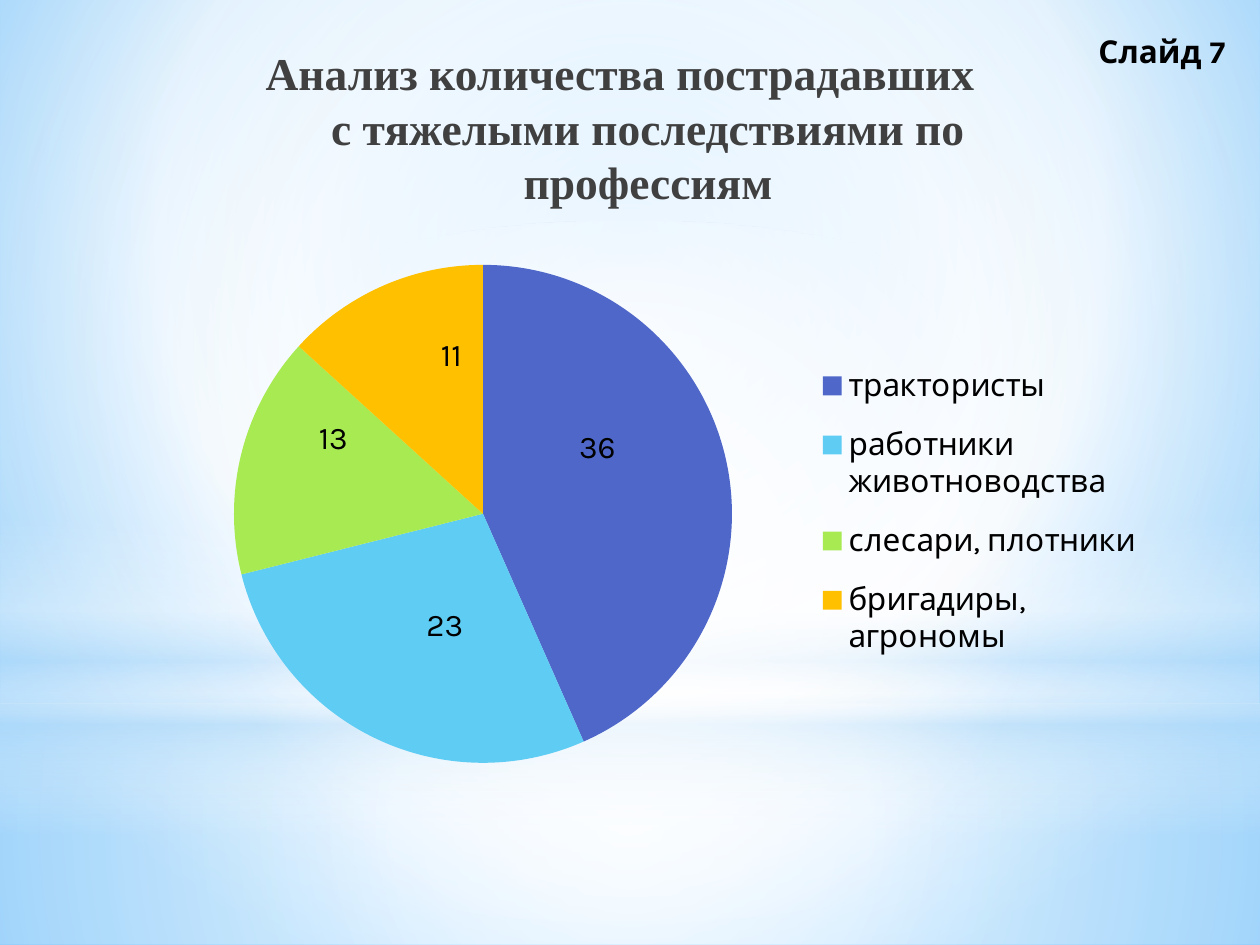
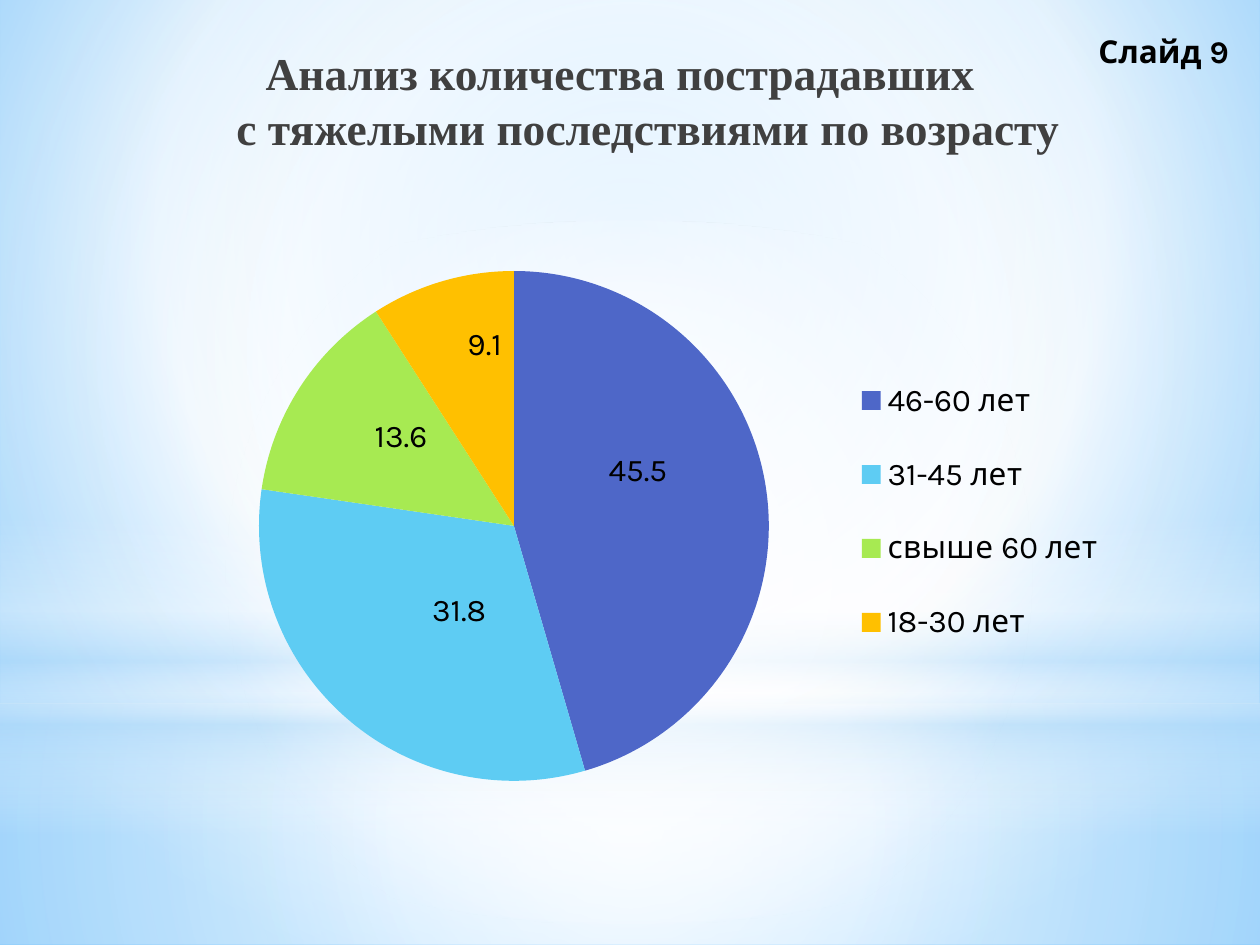
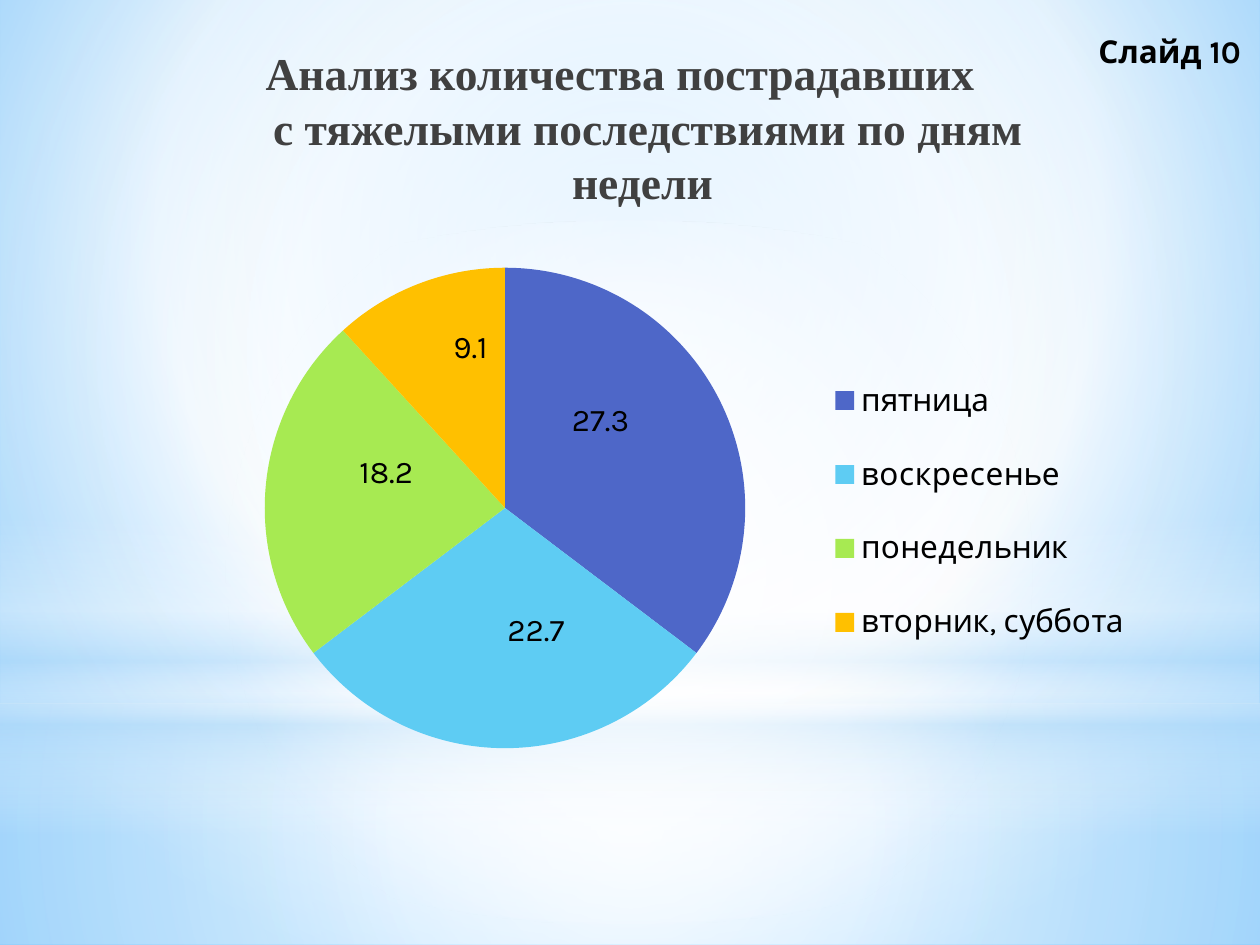
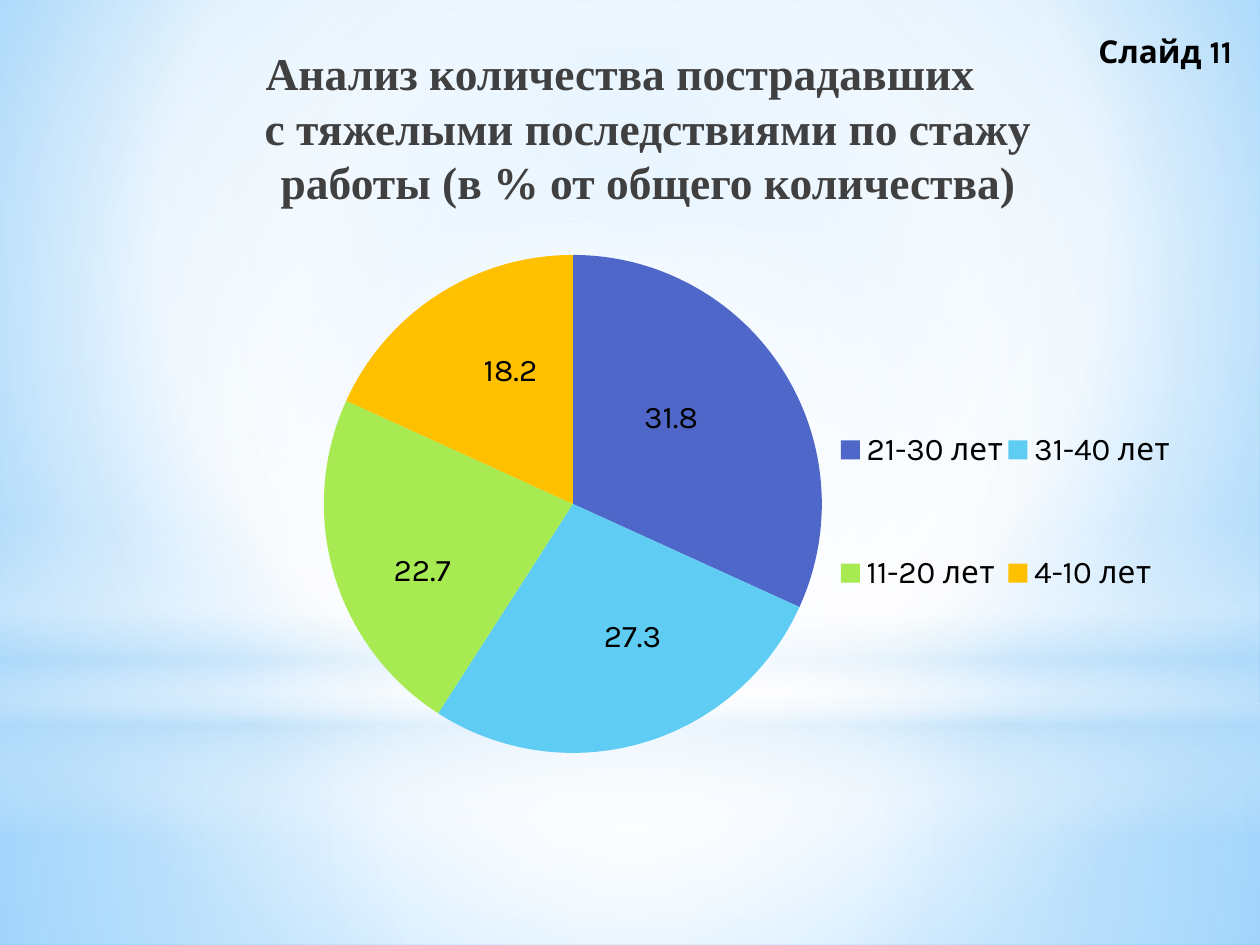
from dataclasses import dataclass

import pptx
import pptx.chart.data
import pptx.dml.color
import pptx.enum.chart
import pptx.enum.shapes
import pptx.enum.text
import pptx.oxml
import pptx.oxml.ns
import pptx.util

Pt = pptx.util.Pt
qn = pptx.oxml.ns.qn
RGB = pptx.dml.color.RGBColor.from_string
SHAPE = pptx.enum.shapes.MSO_SHAPE
CENTRE = (50, 50, 50, 50)


@dataclass(frozen=True)
class Theme:
    """Colours, fonts and type sizes; gradient stops are (position, colour, opacity)."""
    black: str = "000000"
    slices: tuple = ("4E67C8", "5ECCF3", "A7EA52", "FFC000")
    sky: tuple = ((0, "9ED5FF", 100), (60, "FFFFFF", 100), (100, "5BB9FF", 100))
    ground: tuple = ((0, "FFFFFF", 91), (37, "FFFFFF", 76), (100, "B4DCFA", 79))
    air: tuple = ((0, "FFFFFF", 89), (48, "FFFFFF", 62), (100, "B4DCFA", 79))
    horizon: tuple = ((0, "FFFFFF", 0), (29, "FFFFFF", 30), (45, "B4DCFA", 40),
                      (55, "FFFFFF", 26), (65, "B4DCFA", 60), (100, "FFFFFF", 0))
    glow: tuple = ((0, "FFFFFF", 100), (56, "FFFFFF", 0))
    heading: tuple = ((0, "000000", 100), (40, "404040", 100), (100, "212745", 65))
    heading_font: str = "Times New Roman"
    text_font: str = "Karla"
    heading_size: int = 26
    text_size: int = 18


# Boxes shared by every slide: left, top, width, height in points
TITLE_BOX = (101.5, 22.3, 512.6, 78.5)
CHART_BOX = (82, 122.4, 589.7, 339.8)
TAG_BOX = (620.6, 14.6, 99.4, 28.8)


def assign(target, **values):
    for name, value in values.items():
        setattr(target, name, value)


def lengths(box):
    return [Pt(value) for value in box]


def add_child(parent, tag, **attributes):
    child = parent.makeelement(qn(tag), {})
    for name, value in attributes.items():
        child.set(name, str(value))
    parent.append(child)
    return child


def paint_gradient(fill, owner, stops, focus=None):
    """Fill with a circular gradient around focus, or a vertical one without it."""
    fill.gradient()
    gradient = next(owner.iter(qn("a:gradFill")))
    for child in list(gradient):
        gradient.remove(child)
    stop_list = add_child(gradient, "a:gsLst")
    for position, colour, opacity in stops:
        stop = add_child(stop_list, "a:gs", pos=position * 1000)
        tone = add_child(stop, "a:srgbClr", val=colour)
        if opacity < 100:
            add_child(tone, "a:alpha", val=opacity * 1000)
    if focus:
        circle = add_child(gradient, "a:path", path="circle")
        add_child(circle, "a:fillToRect",
                  **{side: share * 1000 for side, share in zip("ltrb", focus)})
    else:
        add_child(gradient, "a:lin", ang=90 * 60000, scaled=0)


def manual_layout(parent, index, **values):
    """Place a chart part by shares of the chart, instead of automatically."""
    for automatic in parent.findall(qn("c:layout")):
        parent.remove(automatic)
    layout = add_child(parent, "c:layout")
    manual = add_child(layout, "c:manualLayout")
    for name, value in values.items():
        add_child(manual, f"c:{name}", val=value)
    parent.insert(index, layout)


class Deck:
    def __init__(self, theme):
        self.theme = theme
        self.presentation = pptx.Presentation()
        assign(self.presentation, slide_width=Pt(720), slide_height=Pt(540))
        self.slide = None

    def new_slide(self):
        first = self.slide is None
        self.slide = self.presentation.slides.add_slide(
            self.presentation.slide_layouts[5])
        if first:
            self.backdrop()

    def backdrop(self):
        """Paint the master: sky, then four translucent layers."""
        theme, master = self.theme, self.presentation.slide_master
        paint_gradient(master.background.fill, master.element, theme.sky, (20, 10, 20, 60))
        layers = [
            (SHAPE.RECTANGLE, (0, 401.8, 720, 138.2), theme.ground, CENTRE),
            (SHAPE.RECTANGLE, (0, 0, 720, 401.8), theme.air, CENTRE),
            (SHAPE.RECTANGLE, (0, 296.6, 720, 180), theme.horizon, None),
            (SHAPE.OVAL, (0, 126, 720, 401.8), theme.glow, CENTRE),
        ]
        for order, (kind, box, stops, focus) in enumerate(layers):
            layer = self.slide.shapes.add_shape(kind, *lengths(box))
            layer.shadow.inherit = False
            layer.line.fill.background()
            paint_gradient(layer.fill, layer.element, stops, focus)
            # Move the layer behind the master's placeholders
            layer.element.nvSpPr.cNvPr.set("id", str(20 + order))
            master.shapes.element.insert(2 + order, layer.element)

    def title(self, ending):
        heading = self.slide.shapes.title
        assign(heading, **dict(zip(("left", "top", "width", "height"), lengths(TITLE_BOX))))
        frame = heading.text_frame
        frame.text = "Анализ количества пострадавших \vс тяжелыми последствиями по " + ending
        assign(frame, word_wrap=True, auto_size=pptx.enum.text.MSO_AUTO_SIZE.NONE,
               vertical_anchor=pptx.enum.text.MSO_ANCHOR.TOP)
        paragraph = frame.paragraphs[0]
        paragraph.alignment = pptx.enum.text.PP_ALIGN.CENTER
        properties = next(heading.element.iter(qn("a:pPr")))
        indent = int(Pt(25.2))
        properties.set("marL", str(indent))
        properties.set("indent", str(-indent))
        for run in paragraph.runs:
            assign(run.font, name=self.theme.heading_font,
                   size=Pt(self.theme.heading_size), bold=True)
            paint_gradient(run.font.fill, run.font._element, self.theme.heading)

    def text_style(self, font, **extra):
        assign(font, name=self.theme.text_font, size=Pt(self.theme.text_size), **extra)
        font.color.rgb = RGB(self.theme.black)

    def pie(self, shares, centre, radius, label_shifts, legend_left):
        data = pptx.chart.data.CategoryChartData()
        data.categories = list(shares)
        data.add_series("Series 1", list(shares.values()))
        chart = self.slide.shapes.add_chart(
            pptx.enum.chart.XL_CHART_TYPE.PIE, *lengths(CHART_BOX), data).chart
        assign(chart, has_title=False, has_legend=True)
        assign(chart.legend, position=pptx.enum.chart.XL_LEGEND_POSITION.RIGHT,
               include_in_layout=False)
        self.text_style(chart.font)
        chart.plots[0].vary_by_categories = True

        # Slices and their shifted value labels, without leader lines
        series = chart.plots[0].series[0]
        series.data_labels.show_value = True
        for index, colour in enumerate(self.theme.slices):
            point = series.points[index]
            point.format.fill.solid()
            point.format.fill.fore_color.rgb = RGB(colour)
            point.format.line.fill.background()
            point.data_label.position = pptx.enum.chart.XL_LABEL_POSITION.BEST_FIT
        for label, (x, y) in zip(chart.element.iter(qn("c:dLbl")), label_shifts):
            manual_layout(label, 1, x=x, y=y)
        for labels in chart.element.iter(qn("c:dLbls")):
            for leader in labels.findall(qn("c:showLeaderLines")):
                labels.remove(leader)
            add_child(labels, "c:showLeaderLines", val=0)

        # Pie and legend as shares of the chart
        left, top, width, height = CHART_BOX
        edges = dict(xMode="edge", yMode="edge")
        manual_layout(next(chart.element.iter(qn("c:plotArea"))), 0,
                      layoutTarget="inner", **edges,
                      x=round((centre[0] - radius - left) / width, 4),
                      y=round((centre[1] - radius - top) / height, 4),
                      w=round(2 * radius / width, 4),
                      h=round(2 * radius / height, 4))
        manual_layout(next(chart.element.iter(qn("c:legend"))), 1, **edges,
                      x=legend_left, y=0.22, w=0.34, h=0.56)

    def tag(self, number):
        frame = self.slide.shapes.add_textbox(*lengths(TAG_BOX)).text_frame
        assign(frame, text=f"Слайд {number}", word_wrap=True,
               auto_size=pptx.enum.text.MSO_AUTO_SIZE.SHAPE_TO_FIT_TEXT)
        self.text_style(frame.paragraphs[0].runs[0].font, bold=True)


# Slide number, title ending, shares, pie centre, pie radius, label shifts, legend left
SLIDES = [
    (7, "профессиям",
     {"трактористы": 36, "работники животноводства": 23,
      "слесари, плотники": 13, "бригадиры, агрономы": 11},
     (276, 293.7), 142.3, [(-0.15, 0.01), (0.09, -0.23), (0.11, 0.01), (0.08, 0.16)], 0.64),
    (9, "возрасту ",
     {"46-60 лет": 45.5, "31-45 лет": 31.8, "свыше 60 лет": 13.6, "18-30 лет": 9.1},
     (293.7, 300.6), 145.7, [(-0.16, 0), (0.14, -0.22), (0.13, 0.12), (0.06, 0.15)], 0.64),
    (10, "дням недели ",
     {"пятница": 27.3, "воскресенье": 22.7, "понедельник": 18.2, "вторник, суббота": 9.1},
     (288.6, 290.3), 137.3, [(-0.15, 0.07), (0.03, -0.24), (0.15, 0.01), (0.07, 0.15)], 0.64),
    (11, "стажу работы (в % от общего количества)",
     {"21-30 лет": 31.8, "31-40 лет": 27.3, "11-20 лет": 22.7, "4-10 лет": 18.2},
     (327.4, 288), 142.3, [(-0.14, 0.12), (-0.04, -0.22), (0.12, -0.04), (0.1, 0.17)], 0.67),
]


def main():
    deck = Deck(Theme())
    for number, ending, *pie_parts in SLIDES:
        deck.new_slide()
        deck.title(ending)
        deck.pie(*pie_parts)
        deck.tag(number)
    deck.presentation.save("out.pptx")


if __name__ == "__main__":
    main()
